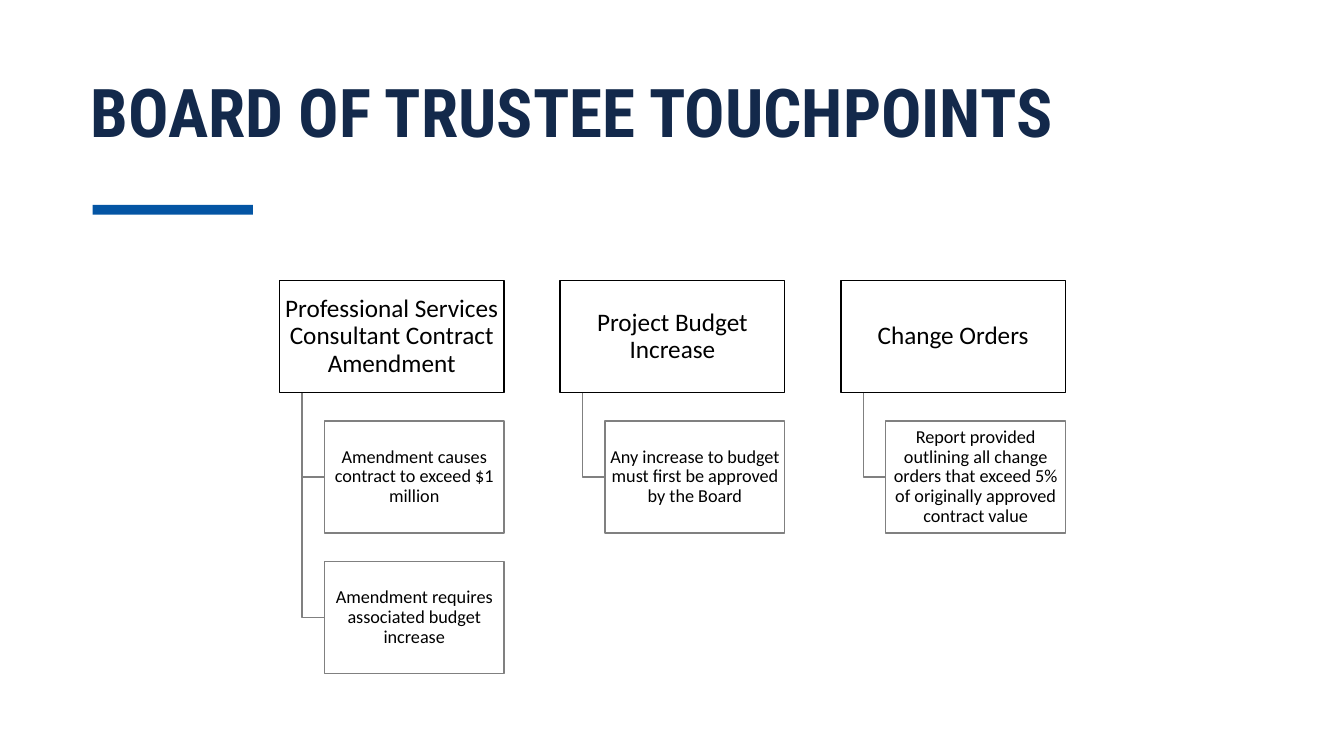
from lxml import etree
from pptx import Presentation
from pptx.dml.color import RGBColor
from pptx.enum.shapes import MSO_SHAPE
from pptx.enum.text import MSO_ANCHOR, MSO_AUTO_SIZE, PP_ALIGN
from pptx.oxml.ns import qn
from pptx.util import Pt

RECTANGLE = MSO_SHAPE.RECTANGLE
TOP, MIDDLE = MSO_ANCHOR.TOP, MSO_ANCHOR.MIDDLE
LEFT, CENTER = PP_ALIGN.LEFT, PP_ALIGN.CENTER
NO_AUTOFIT = MSO_AUTO_SIZE.NONE

NAVY = RGBColor(0x13, 0x29, 0x4B)
BLUE = RGBColor(0x04, 0x55, 0xA4)
BLACK = RGBColor(0x00, 0x00, 0x00)
GRAY = RGBColor(0x80, 0x80, 0x80)
WHITE = RGBColor(0xFF, 0xFF, 0xFF)

# Hierarchy geometry in points, all derived from the width of a header box
TREE_LEFT, TREE_TOP = 199.6, 200.4
HEADER_WIDTH = 160.4
BOX_HEIGHT = HEADER_WIDTH / 2
COLUMN_PITCH = HEADER_WIDTH * 1.25
ROW_PITCH = BOX_HEIGHT * 1.25
STEM_INDENT = HEADER_WIDTH * 0.1
DETAIL_INDENT = HEADER_WIDTH * 0.2

TOUCHPOINTS = [
    ("Professional Services Consultant Contract Amendment",
     ["Amendment causes contract to exceed $1 million",
      "Amendment requires associated budget increase"]),
    ("Project Budget Increase",
     ["Any increase to budget must first be approved by the Board"]),
    ("Change Orders",
     ["Report provided outlining all change orders that exceed 5% "
      "of originally approved contract value"]),
]


def style_paragraph(paragraph, font_name, size, color, alignment):
    paragraph.alignment = alignment
    paragraph.line_spacing = 0.9
    paragraph.font.name = font_name
    paragraph.font.size = Pt(size)
    paragraph.font.color.rgb = color


def add_title(slide, text):
    title = slide.shapes.title
    title.left, title.top = Pt(57.6), Pt(53.3)
    title.width, title.height = Pt(836.6), Pt(103.7)
    frame = title.text_frame
    frame.text = text
    frame.auto_size = NO_AUTOFIT
    frame.vertical_anchor = TOP
    heading = frame.paragraphs[0]
    style_paragraph(heading, "Roboto Condensed", 48, NAVY, LEFT)
    heading.font.bold = True


def add_rectangle(shapes, left, top, width, height, fill):
    rectangle = shapes.add_shape(RECTANGLE, Pt(left), Pt(top), Pt(width), Pt(height))
    rectangle.shadow.inherit = False
    rectangle.fill.solid()
    rectangle.fill.fore_color.rgb = fill
    rectangle.line.fill.background()
    return rectangle


def add_box(shapes, left, top, width, text, size, outline, side_inset, end_inset):
    box = add_rectangle(shapes, left, top, width, BOX_HEIGHT, WHITE)
    box.line.color.rgb = outline
    box.line.width = Pt(1)
    frame = box.text_frame
    frame.text = text
    frame.word_wrap = True
    frame.vertical_anchor = MIDDLE
    frame.margin_left = frame.margin_right = Pt(side_inset)
    frame.margin_top = frame.margin_bottom = Pt(end_inset)
    style_paragraph(frame.paragraphs[0], "Calibri", size, BLACK, CENTER)
    return box


def add_elbow(shapes, left, top, right, bottom):
    outline = shapes.build_freeform(Pt(left), Pt(top))
    outline.add_line_segments(
        [(Pt(left), Pt(bottom)), (Pt(right), Pt(bottom))], close=False)
    elbow = outline.convert_to_shape()
    elbow.shadow.inherit = False
    elbow.fill.background()
    elbow.line.color.rgb = GRAY
    elbow.line.width = Pt(1)


def set_opacity(shape, percent):
    color = shape.fill._xPr.find(qn("a:solidFill"))[0]
    etree.SubElement(color, qn("a:alpha")).set("val", str(percent * 1000))


def add_branch(shapes, left, header, details):
    add_box(shapes, left, TREE_TOP, HEADER_WIDTH, header, 18, BLACK, 2.9, 2.2)
    detail_left = left + DETAIL_INDENT
    for row, detail in enumerate(details, start=1):
        detail_top = TREE_TOP + row * ROW_PITCH
        add_elbow(shapes, left + STEM_INDENT, TREE_TOP + BOX_HEIGHT,
                  detail_left, detail_top + BOX_HEIGHT / 2)
        detail_box = add_box(shapes, detail_left, detail_top,
                             HEADER_WIDTH - DETAIL_INDENT, detail, 13, GRAY, 2.2, 1.4)
        set_opacity(detail_box, 90)


def main():
    presentation = Presentation()
    presentation.slide_width, presentation.slide_height = Pt(960), Pt(540)
    slide = presentation.slides.add_slide(presentation.slide_layouts[5])

    # Title and accent bar
    add_title(slide, "BOARD OF TRUSTEE TOUCHPOINTS")
    add_rectangle(slide.shapes, 66.2, 146.4, 114.5, 7, BLUE)

    # Hierarchy of touchpoints
    hierarchy = slide.shapes.add_group_shape()
    for column, (header, details) in enumerate(TOUCHPOINTS):
        add_branch(hierarchy.shapes, TREE_LEFT + column * COLUMN_PITCH, header, details)

    presentation.save("out.pptx")


if __name__ == "__main__":
    main()
